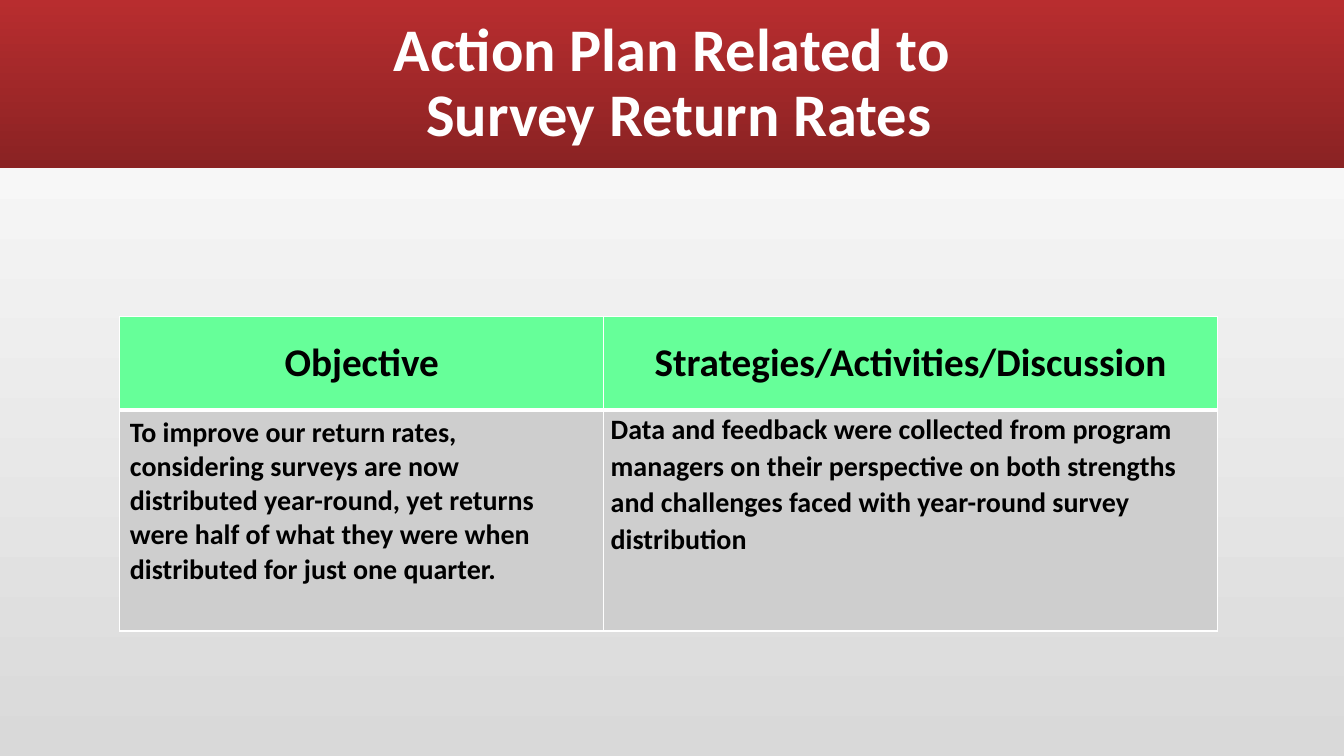
import pptx
import pptx.dml.color
import pptx.enum.shapes
import pptx.enum.text
import pptx.oxml
import pptx.oxml.ns
import pptx.util
from dataclasses import dataclass
from pptx.util import Cm

# Content
TITLE = "Action Plan Related to \vSurvey Return Rates"
HEADERS = ["Objective", "Strategies/Activities/Discussion"]
DETAILS = [
    "To improve our return rates, considering surveys are now distributed "
    "year-round, yet returns were half of what they were when distributed "
    "for just one quarter.",
    "Data and feedback were collected from program managers on their "
    "perspective on both strengths and challenges faced with year-round "
    "survey distribution",
]
COLUMN_WIDTHS = [12.19, 15.47]
ROW_HEIGHTS = [2.36, 5.56]


@dataclass(frozen=True)
class Theme:
    font: str = "Calibri"
    title_size: float = 43.2
    header_size: float = 28
    body_size: float = 20
    white: str = "FFFFFF"
    black: str = "000000"
    header_fill: str = "66FF99"
    body_fill: str = "CECECE"
    band: tuple = ("B82D2F", "8A2223")
    background: tuple = ("D9D9D9", "FFFFFF")
    thin_line: float = 1
    thick_line: float = 3


THEME = Theme()


def rgb(color):
    return pptx.dml.color.RGBColor.from_string(color)


def set_gradient(fill, colors, angle):
    fill.gradient()
    fill.gradient_angle = angle
    for stop, color, position in zip(fill.gradient_stops, colors, (0, 1)):
        stop.color.rgb = rgb(color)
        stop.position = position


def style_paragraph(paragraph, size, color, alignment):
    paragraph.alignment = alignment
    paragraph.font.name = THEME.font
    paragraph.font.size = pptx.util.Pt(size)
    paragraph.font.bold = True
    paragraph.font.color.rgb = rgb(color)


def set_borders(cell, widths):
    properties = cell._tc.get_or_add_tcPr()
    for index, (side, width) in enumerate(widths.items()):
        line = pptx.oxml.parse_xml(
            f'<a:{side} {pptx.oxml.ns.nsdecls("a")} w="{pptx.util.Pt(width)}">'
            f'<a:solidFill><a:srgbClr val="{THEME.white}"/></a:solidFill>'
            f'</a:{side}>'
        )
        properties.insert(index, line)


def add_title(slide):
    # Red band behind the title
    band = slide.shapes.add_shape(
        pptx.enum.shapes.MSO_SHAPE.RECTANGLE, 0, 0, Cm(33.87), Cm(4.23))
    band.shadow.inherit = False
    band.line.fill.background()
    set_gradient(band.fill, THEME.band, 270)

    title = slide.shapes.title
    title.element.addprevious(band.element)
    title.left, title.top = Cm(1.02), Cm(0.28)
    title.width, title.height = Cm(32.18), Cm(3.68)
    frame = title.text_frame
    frame.text = TITLE
    frame.word_wrap = True
    frame.auto_size = pptx.enum.text.MSO_AUTO_SIZE.NONE
    frame.vertical_anchor = pptx.enum.text.MSO_ANCHOR.MIDDLE
    paragraph = frame.paragraphs[0]
    style_paragraph(paragraph, THEME.title_size, THEME.white,
                    pptx.enum.text.PP_ALIGN.CENTER)
    paragraph.line_spacing = 0.9


def add_plan_table(slide):
    rows = [HEADERS, DETAILS]
    table = slide.shapes.add_table(
        len(rows), len(HEADERS), Cm(3.02), Cm(7.98),
        Cm(sum(COLUMN_WIDTHS)), Cm(sum(ROW_HEIGHTS))).table
    for column, width in zip(table.columns, COLUMN_WIDTHS):
        column.width = Cm(width)
    for row, height in zip(table.rows, ROW_HEIGHTS):
        row.height = Cm(height)

    thin, thick = THEME.thin_line, THEME.thick_line
    align, anchor = pptx.enum.text.PP_ALIGN, pptx.enum.text.MSO_ANCHOR
    row_styles = [
        (THEME.header_size, THEME.header_fill, align.CENTER, anchor.MIDDLE, thin, thick),
        (THEME.body_size, THEME.body_fill, align.LEFT, anchor.TOP, thick, thin),
    ]
    for row_index, (texts, style) in enumerate(zip(rows, row_styles)):
        size, fill, alignment, vertical, top, bottom = style
        for column_index, text in enumerate(texts):
            cell = table.cell(row_index, column_index)
            cell.text = text
            cell.vertical_anchor = vertical
            cell.fill.solid()
            cell.fill.fore_color.rgb = rgb(fill)
            style_paragraph(cell.text_frame.paragraphs[0], size, THEME.black, alignment)
            set_borders(cell, {"lnL": thin, "lnR": thin, "lnT": top, "lnB": bottom})

    # The discussion cell has tighter margins and looser lines
    discussion = table.cell(1, 1)
    discussion.margin_left = discussion.margin_right = Cm(0.18)
    discussion.margin_top = discussion.margin_bottom = 0
    discussion.text_frame.paragraphs[0].line_spacing = 1.07


def main():
    presentation = pptx.Presentation()
    presentation.slide_width, presentation.slide_height = Cm(33.87), Cm(19.05)
    slide = presentation.slides.add_slide(presentation.slide_layouts[5])
    set_gradient(slide.background.fill, THEME.background, 90)
    add_title(slide)
    add_plan_table(slide)
    presentation.save("out.pptx")


if __name__ == "__main__":
    main()
